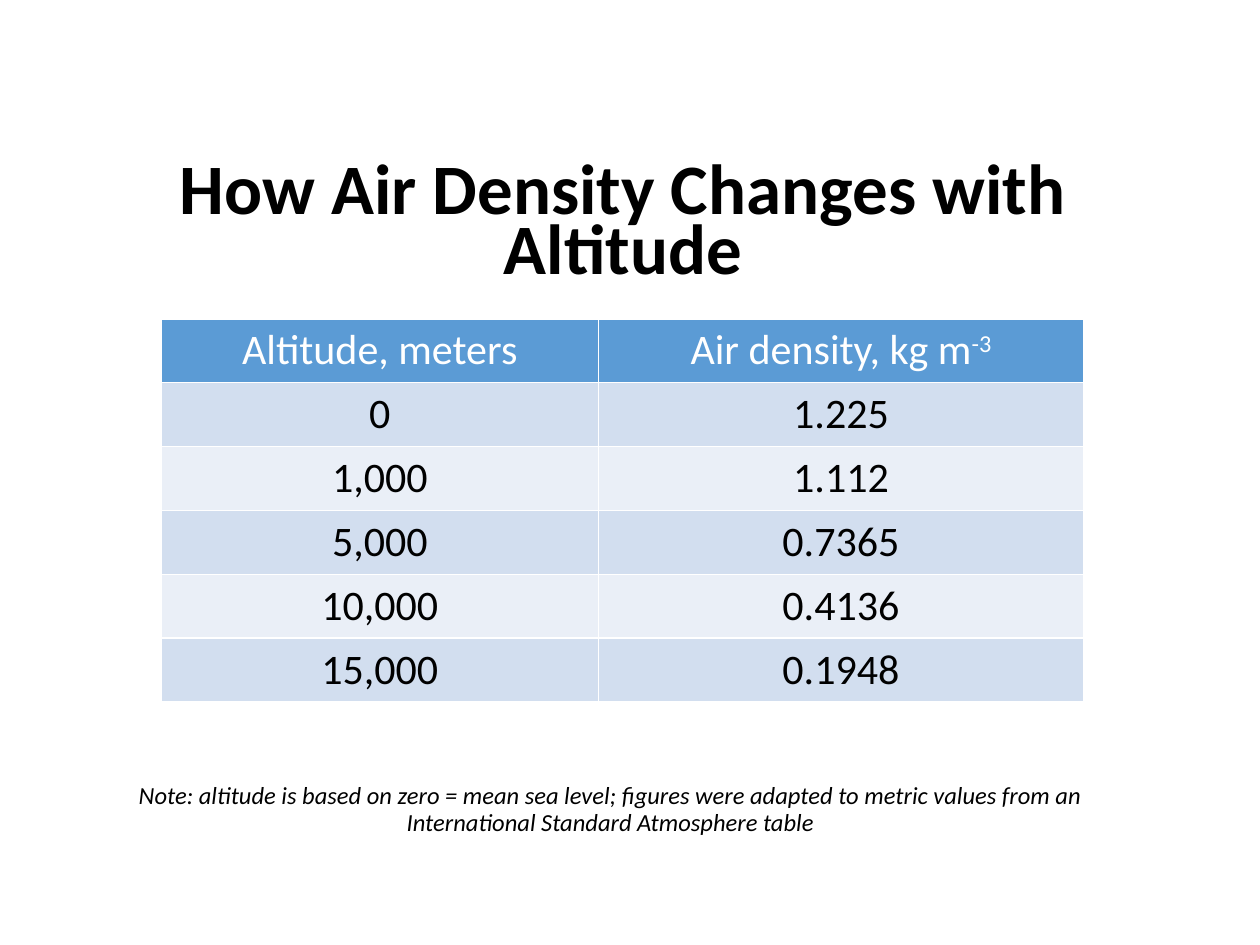
from pptx import Presentation
from pptx.dml.color import RGBColor
from pptx.enum.text import MSO_ANCHOR, MSO_AUTO_SIZE, PP_ALIGN
from pptx.util import Inches, Pt

CENTER = PP_ALIGN.CENTER
TOP, BOTTOM = MSO_ANCHOR.TOP, MSO_ANCHOR.BOTTOM
NO_AUTOFIT = MSO_AUTO_SIZE.NONE

BLACK = RGBColor(0x00, 0x00, 0x00)
WHITE = RGBColor(0xFF, 0xFF, 0xFF)
HEADER_BLUE = RGBColor(0x5B, 0x9B, 0xD5)
BAND_DARK = RGBColor(0xD2, 0xDE, 0xEF)
BAND_LIGHT = RGBColor(0xEA, 0xEF, 0xF7)


def format_paragraph(paragraph, size, color, bold=False, italic=False):
    paragraph.alignment = CENTER
    font = paragraph.font
    font.name = "Calibri"
    font.size = Pt(size)
    font.color.rgb = color
    font.bold = bold
    font.italic = italic


def fill_text_frame(shape, text, anchor, line_spacing):
    text_frame = shape.text_frame
    text_frame.text = text
    text_frame.word_wrap = True
    text_frame.auto_size = NO_AUTOFIT
    text_frame.vertical_anchor = anchor
    paragraph = text_frame.paragraphs[0]
    paragraph.line_spacing = line_spacing
    return paragraph


presentation = Presentation()
presentation.slide_width = Inches(10)
presentation.slide_height = Inches(7.5)
slide = presentation.slides.add_slide(presentation.slide_layouts[5])

title = slide.shapes.title
title.left, title.top = Inches(0.48), Inches(1.49)
title.width, title.height = Inches(8.93), Inches(0.83)
paragraph = fill_text_frame(title, "How Air Density Changes with Altitude", BOTTOM, 0.7)
format_paragraph(paragraph, 40.5, BLACK, bold=True)

rows = [
    ("Altitude, meters", "Air density, kg m"),
    ("0", "1.225"),
    ("1,000", "1.112"),
    ("5,000", "0.7365"),
    ("10,000", "0.4136"),
    ("15,000", "0.1948"),
]
table = slide.shapes.add_table(
    len(rows), 2, Inches(1.28), Inches(2.53), Inches(7.32), Inches(3)
).table
table.columns[0].width = Inches(3.47)
table.columns[1].width = Inches(3.85)

for row_index, values in enumerate(rows):
    if row_index == 0:
        fill_color, text_color = HEADER_BLUE, WHITE
    else:
        fill_color = BAND_DARK if row_index % 2 else BAND_LIGHT
        text_color = BLACK
    for column_index, value in enumerate(values):
        cell = table.cell(row_index, column_index)
        cell.fill.solid()
        cell.fill.fore_color.rgb = fill_color
        cell.text = value
        format_paragraph(cell.text_frame.paragraphs[0], 24, text_color)

exponent = table.cell(0, 1).text_frame.paragraphs[0].add_run()
exponent.text = "-3"
exponent.font._element.set("baseline", "30000")

note = slide.shapes.add_textbox(Inches(0.91), Inches(6.17), Inches(7.87), Inches(0.73))
paragraph = fill_text_frame(
    note,
    "Note: altitude is based on zero = mean sea level; figures were adapted "
    "to metric values from an International Standard Atmosphere table",
    TOP,
    0.9,
)
format_paragraph(paragraph, 14, BLACK, italic=True)

presentation.save("out.pptx")
